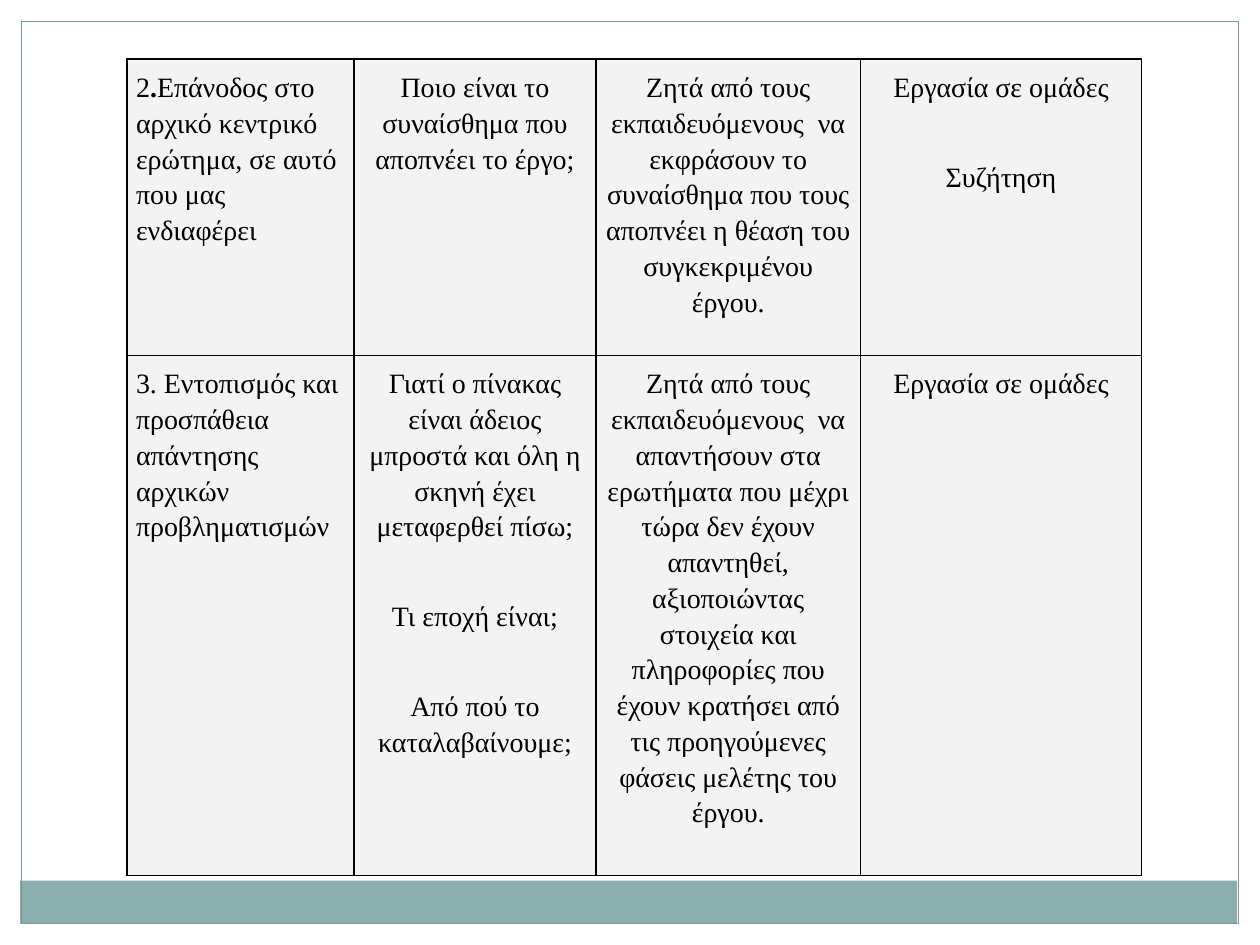
from dataclasses import dataclass

from lxml.etree import SubElement
from pptx import Presentation
from pptx.dml.color import RGBColor as Color
from pptx.enum.shapes import MSO_SHAPE as Shape
from pptx.enum.text import PP_ALIGN as Align
from pptx.oxml.ns import qn
from pptx.util import Inches, Pt


@dataclass(frozen=True)
class Theme:
    font: str = "Times New Roman"
    size: float = 16
    line_spacing: float = 1.15
    space_after: float = 12
    question_gap: float = 31
    border: float = 1
    frame_width: float = 0.75
    margin: float = 0.07
    ink: str = "000000"
    cell: str = "F3F3F3"
    edge: str = "FFFFFF"
    band: str = "8CADAE"
    frame: str = "7C999A"


class SlideBuilder:
    """Draws styled elements on the current slide."""

    def __init__(self, slide, theme):
        self.slide = slide
        self.theme = theme

    def rectangle(self, left, top, width, height, fill=None, line=None):
        box = self.slide.shapes.add_shape(
            Shape.RECTANGLE, Inches(left), Inches(top), Inches(width), Inches(height))
        box.shadow.inherit = False
        if fill:
            box.fill.solid()
            box.fill.fore_color.rgb = Color.from_string(fill)
        else:
            box.fill.background()
        if line:
            box.line.color.rgb = Color.from_string(line)
            box.line.width = Pt(self.theme.frame_width)
        else:
            box.line.fill.background()

    def table(self, left, top, widths, heights, rows):
        table = self.slide.shapes.add_table(
            len(heights), len(widths), Inches(left), Inches(top),
            Inches(sum(widths)), Inches(sum(heights))).table
        table.first_row = table.horz_banding = False
        for column, width in zip(table.columns, widths):
            column.width = Inches(width)
        for row, height, contents in zip(table.rows, heights, rows):
            row.height = Inches(height)
            for index, (cell, paragraphs) in enumerate(zip(row.cells, contents)):
                self.cell(cell, paragraphs, Align.CENTER if index else Align.LEFT)

    def cell(self, cell, paragraphs, align):
        margin = Inches(self.theme.margin)
        cell.margin_left = cell.margin_right = margin
        cell.margin_top = cell.margin_bottom = margin
        self.borders(cell)
        cell.fill.solid()
        cell.fill.fore_color.rgb = Color.from_string(self.theme.cell)
        frame = cell.text_frame
        for index, runs in enumerate(paragraphs):
            para = frame.add_paragraph() if index else frame.paragraphs[0]
            is_last = index == len(paragraphs) - 1
            para.alignment = align
            para.line_spacing = self.theme.line_spacing
            para.space_after = Pt(self.theme.space_after if is_last else self.theme.question_gap)
            for text, bold in runs:
                self.run(para, text, bold)

    def run(self, para, text, bold):
        span = para.add_run()
        span.text = text
        span.font.name = self.theme.font
        span.font.size = Pt(self.theme.size)
        span.font.bold = bold
        span.font.color.rgb = Color.from_string(self.theme.ink)

    def borders(self, cell):
        properties = cell._tc.get_or_add_tcPr()
        for side in ("a:lnL", "a:lnR", "a:lnT", "a:lnB"):
            line = SubElement(properties, qn(side), w=str(Pt(self.theme.border)))
            fill = SubElement(line, qn("a:solidFill"))
            SubElement(fill, qn("a:srgbClr"), val=self.theme.ink)


def plain(*texts):
    return [[(text, False)] for text in texts]


LESSON_ROWS = [
    [
        [[("2", False), (".", True),
          ("Επάνοδος στο αρχικό κεντρικό ερώτημα, σε αυτό που μας ενδιαφέρει", False)]],
        plain("Ποιο είναι το συναίσθημα που αποπνέει το έργο;"),
        plain("Ζητά από τους εκπαιδευόμενους  να εκφράσουν το συναίσθημα που τους "
              "αποπνέει η θέαση του συγκεκριμένου έργου."),
        plain("Εργασία σε ομάδες", "Συζήτηση"),
    ],
    [
        plain("3. Εντοπισμός και προσπάθεια απάντησης αρχικών προβληματισμών"),
        plain("Γιατί ο πίνακας είναι άδειος μπροστά και όλη η σκηνή έχει μεταφερθεί πίσω;",
              "Τι εποχή είναι;",
              "Από πού το καταλαβαίνουμε;"),
        plain("Ζητά από τους εκπαιδευόμενους  να απαντήσουν στα ερωτήματα που μέχρι τώρα "
              "δεν έχουν απαντηθεί, αξιοποιώντας στοιχεία και πληροφορίες που έχουν "
              "κρατήσει από τις προηγούμενες φάσεις μελέτης του έργου."),
        plain("Εργασία σε ομάδες"),
    ],
]


def main():
    deck = Presentation()
    deck.slide_width, deck.slide_height = Inches(10), Inches(7.5)
    theme = Theme()
    page = SlideBuilder(deck.slides.add_slide(deck.slide_layouts[6]), theme)
    for edge in ((0, 0, 10, 0.17), (9.83, 0, 0.17, 7.5), (0, 0, 0.17, 7.5)):
        page.rectangle(*edge, fill=theme.edge)
    page.rectangle(0.16, 6.99, 9.66, 0.34, fill=theme.band)
    page.rectangle(0.17, 0.17, 9.66, 7.16, line=theme.frame)
    page.table(1.01, 0.47, [1.8, 1.92, 2.1, 2.23], [2.35, 4.13], LESSON_ROWS)
    deck.save("out.pptx")


if __name__ == "__main__":
    main()
